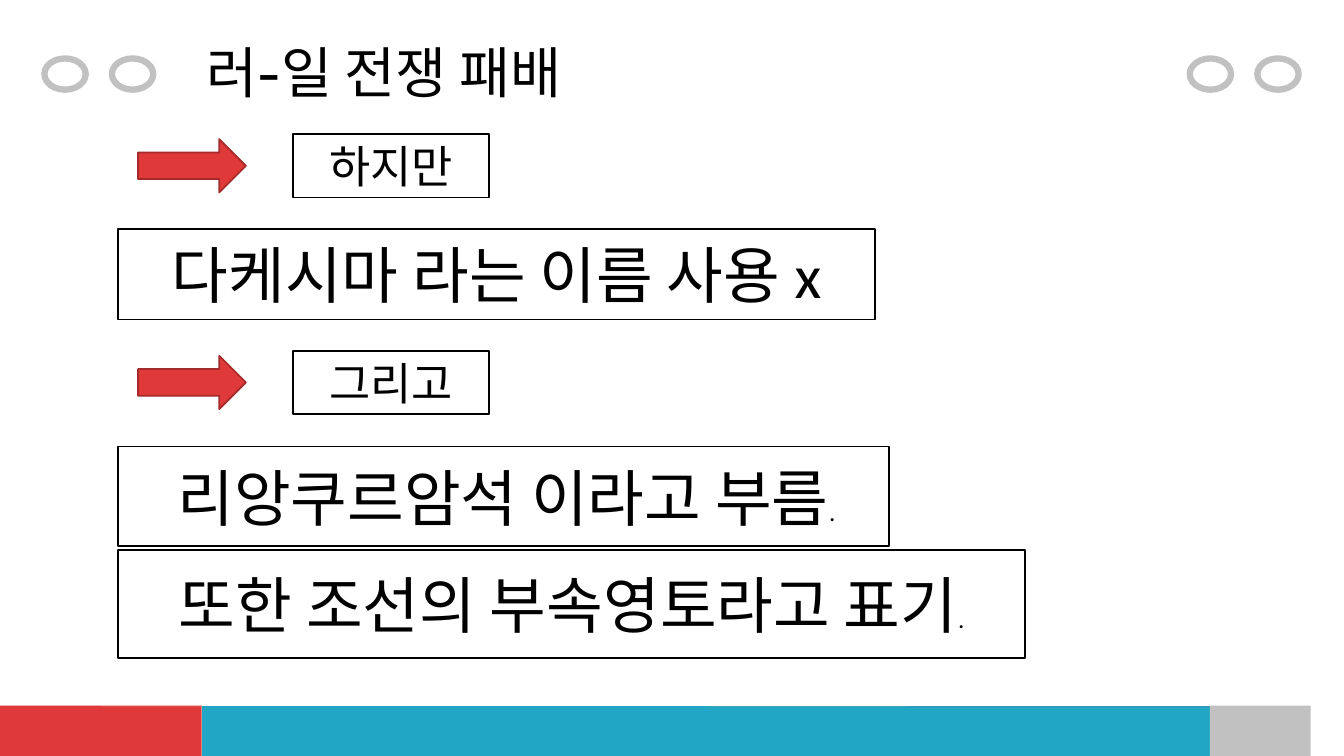
"""Build the slide on the Russo-Japanese War and the naming of the islands."""
from typing import NamedTuple

from pptx import Presentation
from pptx import util as u
from pptx.dml.color import RGBColor
from pptx.enum import shapes, text

BLACK = RGBColor(0x00, 0x00, 0x00)
WHITE = RGBColor(0xFF, 0xFF, 0xFF)
SILVER = RGBColor(0xC1, 0xC1, 0xC1)
PALE = RGBColor(0xDA, 0xDA, 0xDA)
RED = RGBColor(0xDF, 0x39, 0x39)
DARK_RED = RGBColor(0xA5, 0x2A, 0x2A)
TEAL = RGBColor(0x21, 0xA6, 0xC5)
AMBER = RGBColor(0xF0, 0xA7, 0x3C)


class Band(NamedTuple):
    color: RGBColor
    corners: list[tuple[float, float]]


class Statement(NamedTuple):
    left: float
    top: float
    width: float
    height: float
    phrases: list[tuple[str, float]]


FOOTER = [
    Band(SILVER, [(0, 6.81), (1.79, 6.84), (1.99, 6.97), (0.76, 6.97), (0.74, 7.04), (0, 7.04)]),
    Band(RED, [(0, 7.08), (0.73, 7.08), (0.68, 7.19), (1.5, 7.19), (1.59, 7.5), (0, 7.5)]),
    Band(PALE, [(0.8, 6.99), (7.35, 7), (7.25, 7.13), (0.73, 7.16)]),
    Band(TEAL, [(1.54, 7.2), (11.95, 7.16), (11.84, 7.51), (1.62, 7.51)]),
    Band(AMBER, [(7.44, 6.92), (8.97, 6.95), (9.01, 7.13), (7.3, 7.14)]),
    Band(RED, [(8.99, 6.95), (12.59, 6.96), (12.2, 7.11), (9.06, 7.13)]),
    Band(TEAL, [(12.67, 6.96), (13.14, 6.96), (12.72, 7.12), (12.27, 7.12)]),
    Band(SILVER, [(12.01, 7.15), (12.74, 7.16), (13.24, 6.96), (13.33, 6.96),
                  (13.33, 7.5), (11.9, 7.5)]),
]
RING_LEFTS = [0.44, 1.11, 11.8, 12.47]
ARROW_TOPS = [1.38, 3.53]
STATEMENTS = [
    Statement(2.91, 1.33, 1.94, 0.63, [("하지만", 32)]),
    Statement(1.17, 2.27, 7.51, 0.9, [("다케시마 라는 이름 사용 x", 44)]),
    Statement(2.91, 3.48, 1.94, 0.63, [("그리고", 32)]),
    Statement(1.17, 4.43, 7.65, 0.99, [(" ", 18), ("리앙쿠르암석 이라고 부름", 44), (".", 18)]),
    Statement(1.17, 5.46, 9, 1.07, [("또한 조선의 부속영토라고 표기", 44), (".", 18)]),
]


def write(frame, phrases: list[tuple[str, float]], *, font: str = "Calibri",
          color: RGBColor = BLACK) -> None:
    frame.word_wrap = True
    frame.auto_size = text.MSO_AUTO_SIZE.NONE
    frame.vertical_anchor = text.MSO_ANCHOR.MIDDLE
    paragraph = frame.paragraphs[0]
    paragraph.alignment = text.PP_ALIGN.CENTER
    for wording, size in phrases:
        run = paragraph.add_run()
        run.text = wording
        run.font.name = font
        run.font.size = u.Pt(size)
        run.font.color.rgb = color


def draw_band(slide, band: Band) -> None:
    outline = slide.shapes.build_freeform(*band.corners[0], scale=u.Inches(1))
    outline.add_line_segments(band.corners[1:], close=True)
    strip = outline.convert_to_shape()
    strip.shadow.inherit = False
    strip.fill.solid()
    strip.fill.fore_color.rgb = band.color
    strip.line.fill.background()


def draw_preset(slide, kind, left: float, top: float, width: float, height: float, *,
                fill: RGBColor | None, line: RGBColor, weight: float = 1.25):
    preset = slide.shapes.add_shape(
        kind, u.Inches(left), u.Inches(top), u.Inches(width), u.Inches(height))
    preset.shadow.inherit = False
    if fill is None:
        preset.fill.background()
    else:
        preset.fill.solid()
        preset.fill.fore_color.rgb = fill
    preset.line.color.rgb = line
    preset.line.width = u.Pt(weight)
    return preset


def main() -> None:
    deck = Presentation()
    deck.slide_width, deck.slide_height = u.Inches(13.33), u.Inches(7.5)
    slide = deck.slides.add_slide(deck.slide_layouts.get_by_name("Title Only"))

    for band in FOOTER:
        draw_band(slide, band)
    for left in RING_LEFTS:
        draw_preset(slide, shapes.MSO_SHAPE.OVAL, left, 0.58, 0.41, 0.31,
                    fill=None, line=SILVER, weight=4.5)

    heading = slide.shapes.title
    heading.left, heading.top = u.Inches(1.17), u.Inches(0.31)
    heading.width, heading.height = u.Inches(5.28), u.Inches(0.8)
    write(heading.text_frame, [("러-일 전쟁 패배", 39.6)], font="Cabin")

    for top in ARROW_TOPS:
        draw_preset(slide, shapes.MSO_SHAPE.RIGHT_ARROW, 1.37, top, 1.07, 0.53,
                    fill=RED, line=DARK_RED)
    for statement in STATEMENTS:
        box = draw_preset(slide, shapes.MSO_SHAPE.RECTANGLE, *statement[:4],
                          fill=WHITE, line=BLACK)
        write(box.text_frame, statement.phrases)

    deck.save("out.pptx")


if __name__ == "__main__":
    main()
